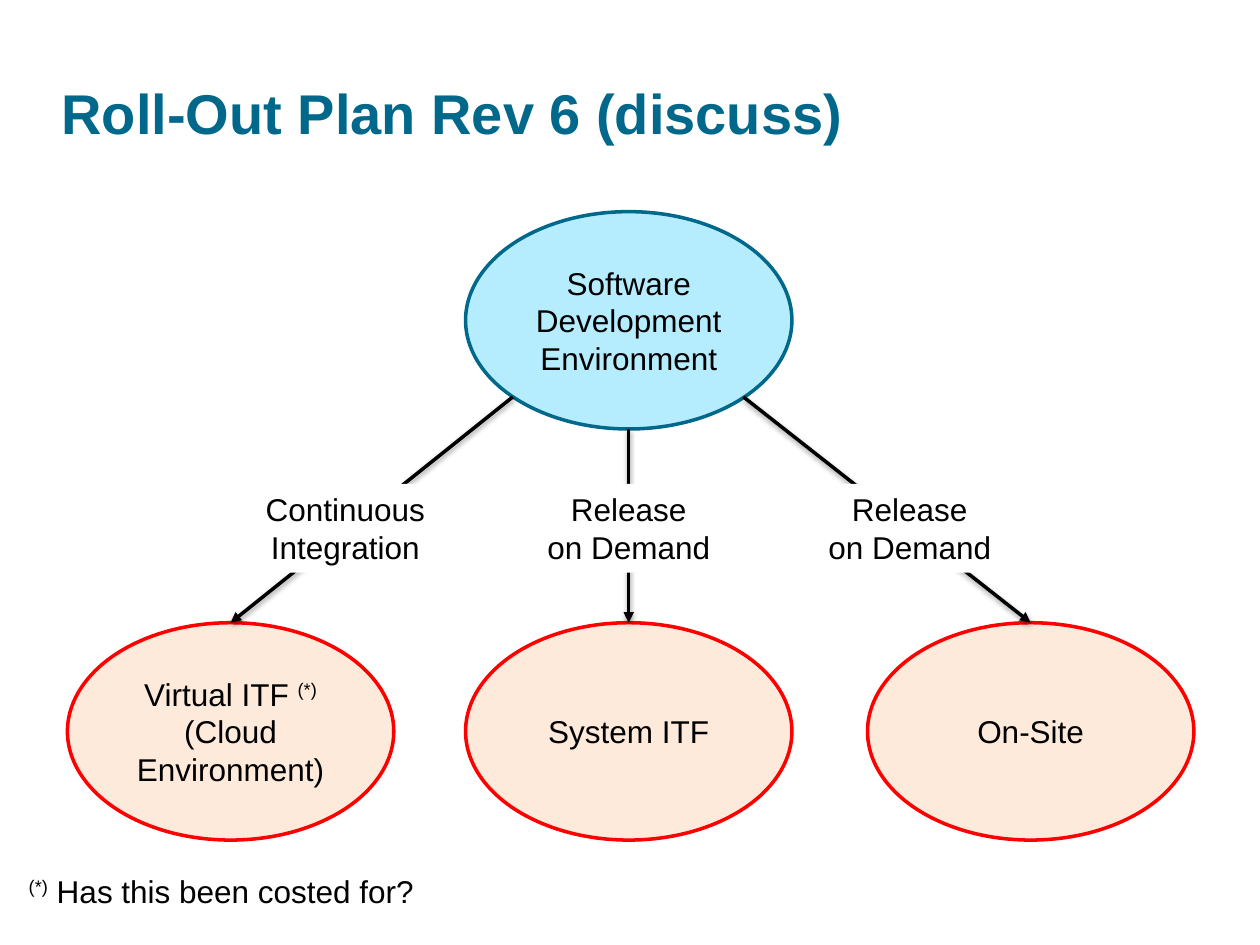
from dataclasses import dataclass
from lxml import etree
from pptx import Presentation
from pptx.dml.color import RGBColor
from pptx.enum import shapes, text
from pptx.oxml import parse_xml
from pptx.oxml.ns import nsdecls
from pptx.util import Inches, Pt


@dataclass(frozen=True)
class Theme:
    font: str = "Arial"
    title_size: int = 32
    body_size: int = 18
    line_width: int = 2
    teal: RGBColor = RGBColor.from_string("00688A")
    sky: RGBColor = RGBColor.from_string("B5EDFF")
    peach: RGBColor = RGBColor.from_string("FDEADA")
    red: RGBColor = RGBColor.from_string("FF0000")
    black: RGBColor = RGBColor.from_string("000000")
    white: RGBColor = RGBColor.from_string("FFFFFF")


theme = Theme()
deck = Presentation()
deck.slide_width, deck.slide_height = Inches(10), Inches(7.5)
page = deck.slides.add_slide(deck.slide_layouts[6])
W, H = deck.slide_width, deck.slide_height


def write(box, wording, size=theme.body_size, color=theme.black, bold=False,
          align=text.PP_ALIGN.CENTER, anchor=text.MSO_ANCHOR.TOP, wrap=True):
    frame = box.text_frame
    frame.word_wrap = wrap
    frame.vertical_anchor = anchor
    for row, line in enumerate(wording.split("\n")):
        para = frame.paragraphs[0] if row == 0 else frame.add_paragraph()
        para.alignment = align
        for index, part in enumerate(line.split("^")):
            if not part:
                continue
            span = para.add_run()
            span.text = part
            span.font.name, span.font.size = theme.font, Pt(size)
            span.font.color.rgb, span.font.bold = color, bold
            if index % 2:
                span.font._element.set("baseline", "30000")


def add_filled(kind, left, top, width, height, fill, outline=None):
    shape = page.shapes.add_shape(kind, int(left), int(top), int(width), int(height))
    shape.shadow.inherit = False
    shape.fill.solid()
    shape.fill.fore_color.rgb = fill
    if outline is None:
        shape.line.fill.background()
    else:
        shape.line.color.rgb, shape.line.width = outline, Pt(theme.line_width)
    return shape


title = page.shapes.add_textbox(int(W * 0.039), int(H * 0.076), int(W * 0.686), int(H * 0.09))
write(title, "Roll-Out Plan Rev 6 (discuss)", size=theme.title_size, color=theme.teal,
      bold=True, align=text.PP_ALIGN.LEFT)

oval_width, oval_height = W * 0.259, H * 0.23
centers = [W * 0.183, W * 0.499, W * 0.818]
source_top, target_top = H * 0.224, H * 0.659

source = add_filled(shapes.MSO_SHAPE.OVAL, centers[1] - oval_width / 2, source_top,
                    oval_width, oval_height, theme.sky, theme.teal)
write(source, "Software Development Environment", anchor=text.MSO_ANCHOR.MIDDLE)

targets = []
for center, wording in zip(centers, ["Virtual ITF ^(*)^\n(Cloud Environment)", "System ITF", "On-Site"]):
    target = add_filled(shapes.MSO_SHAPE.OVAL, center - oval_width / 2, target_top,
                        oval_width, oval_height, theme.peach, theme.red)
    write(target, wording, anchor=text.MSO_ANCHOR.MIDDLE)
    targets.append(target)

starts = [(W * 0.407, H * 0.42), (centers[1], source_top + oval_height), (W * 0.59, H * 0.42)]
for (left, top), center, target in zip(starts, centers, targets):
    arrow = page.shapes.add_connector(shapes.MSO_CONNECTOR.STRAIGHT, int(left), int(top),
                                      int(center), int(target_top))
    arrow.end_connect(target, 0)
    arrow.line.color.rgb, arrow.line.width = theme.black, Pt(theme.line_width)
    etree.SubElement(arrow.line._get_or_add_ln(),
                     "{http://schemas.openxmlformats.org/drawingml/2006/main}tailEnd", type="triangle")
    arrow._element.spPr.append(parse_xml(
        f'<a:effectLst {nsdecls("a")}><a:outerShdw blurRad="{Pt(3.1)}" dist="{Pt(1.6)}" '
        f'dir="5400000" rotWithShape="0"><a:srgbClr val="{theme.black}">'
        '<a:alpha val="38000"/></a:srgbClr></a:outerShdw></a:effectLst>'))

labels = [("Continuous\nIntegration", 0.274), ("Release\non Demand", 0.499), ("Release\non Demand", 0.722)]
label_width = W * 0.151
for wording, center in labels:
    label = add_filled(shapes.MSO_SHAPE.RECTANGLE, W * center - label_width / 2, H * 0.512,
                       label_width, H * 0.094, theme.white)
    write(label, wording, wrap=False)

footnote = page.shapes.add_textbox(int(W * 0.013), int(H * 0.916), int(W * 0.34), int(H * 0.053))
write(footnote, "^(*)^ Has this been costed for?", align=text.PP_ALIGN.LEFT, wrap=False)

deck.save("out.pptx")
